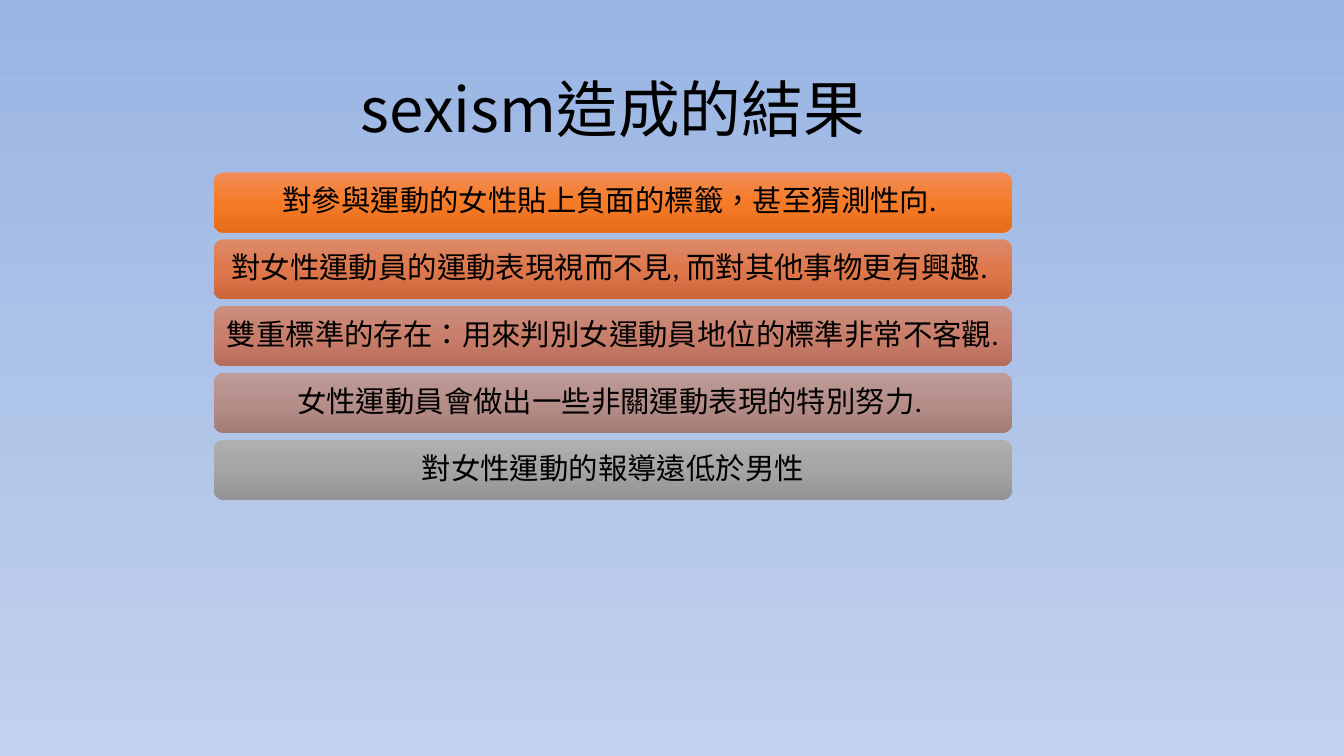
from lxml import etree
from pptx import Presentation
from pptx.dml.color import RGBColor
from pptx.enum.lang import MSO_LANGUAGE_ID
from pptx.enum.shapes import MSO_SHAPE
from pptx.enum.text import MSO_ANCHOR, PP_ALIGN
from pptx.oxml.ns import qn
from pptx.util import Pt

TITLE = "sexism造成的結果"
RESULTS = [
    ("對參與運動的女性貼上負面的標籤，甚至猜測性向. ", "orange"),
    ("對女性運動員的運動表現視而不見, 而對其他事物更有興趣. ", "rust"),
    ("雙重標準的存在：用來判別女運動員地位的標準非常不客觀. ", "clay"),
    ("女性運動員會做出一些非關運動表現的特別努力. ", "mauve"),
    ("對女性運動的報導遠低於男性", "gray"),
]
COLORS = {
    "text": "000000",
    "sky": ["9AB5E4", "C2D1ED"],
    "orange": ["F18C57", "F67B28", "E56C19"],
    "rust": ["DD8A6A", "DE774B", "CD673B"],
    "clay": ["CB8F81", "C97E6B", "B76D5B"],
    "mauve": ["BC9C99", "B68E89", "A47C78"],
    "gray": ["AFAFAF", "A5A5A5", "939393"],
}
CJK_FONT = "Noto Sans CJK SC"
BODY_FONT = "Calibri"
LEFT, WIDTH = 152.64, 570.24
TITLE_TOP, TITLE_HEIGHT = 31.7, 90
BAR_TOP, BAR_HEIGHT, BAR_PITCH = 123.2, 42.9, 47.7
BAR_INSET = 6.3
CENTER = PP_ALIGN.CENTER
MIDDLE = MSO_ANCHOR.MIDDLE
ROUNDED = MSO_SHAPE.ROUNDED_RECTANGLE
CHINESE = MSO_LANGUAGE_ID.TRADITIONAL_CHINESE


def paint_gradient(fill, element, colors):
    fill.gradient()
    fill.gradient_angle = 270
    stops = next(element.iter(qn("a:gsLst")))
    for stop in list(stops):
        stops.remove(stop)
    for i, color in enumerate(colors):
        position = 100000 * i // (len(colors) - 1)
        stop = etree.SubElement(stops, qn("a:gs"), pos=str(position))
        etree.SubElement(stop, qn("a:srgbClr"), val=color)


def write_text(sp, text, font, size):
    tf = sp.text_frame
    tf.word_wrap = True
    tf.vertical_anchor = MIDDLE
    p = tf.paragraphs[0]
    p.alignment = CENTER
    r = p.add_run()
    r.text = text
    r.font.name = font
    r.font.size = Pt(size)
    r.font.language_id = CHINESE
    r.font.color.rgb = RGBColor.from_string(COLORS["text"])
    return tf


prs = Presentation()
prs.slide_width, prs.slide_height = Pt(960), Pt(540)
s = prs.slides.add_slide(prs.slide_layouts[6])
paint_gradient(s.background.fill, s.element, COLORS["sky"])

title = s.shapes.add_textbox(Pt(LEFT), Pt(TITLE_TOP), Pt(WIDTH), Pt(TITLE_HEIGHT))
write_text(title, TITLE, CJK_FONT, 44)

for i, (text, color) in enumerate(RESULTS):
    top = BAR_TOP + i * BAR_PITCH
    bar = s.shapes.add_shape(ROUNDED, Pt(LEFT), Pt(top), Pt(WIDTH), Pt(BAR_HEIGHT))
    bar.shadow.inherit = False
    bar.line.fill.background()
    paint_gradient(bar.fill, bar.element, COLORS[color])
    tf = write_text(bar, text, BODY_FONT, 21)
    tf.margin_left = tf.margin_right = Pt(BAR_INSET)
    tf.margin_top = tf.margin_bottom = Pt(BAR_INSET)
    tf.paragraphs[0].line_spacing = 0.9
    tf.paragraphs[0].space_after = Pt(7.35)

prs.save("out.pptx")
